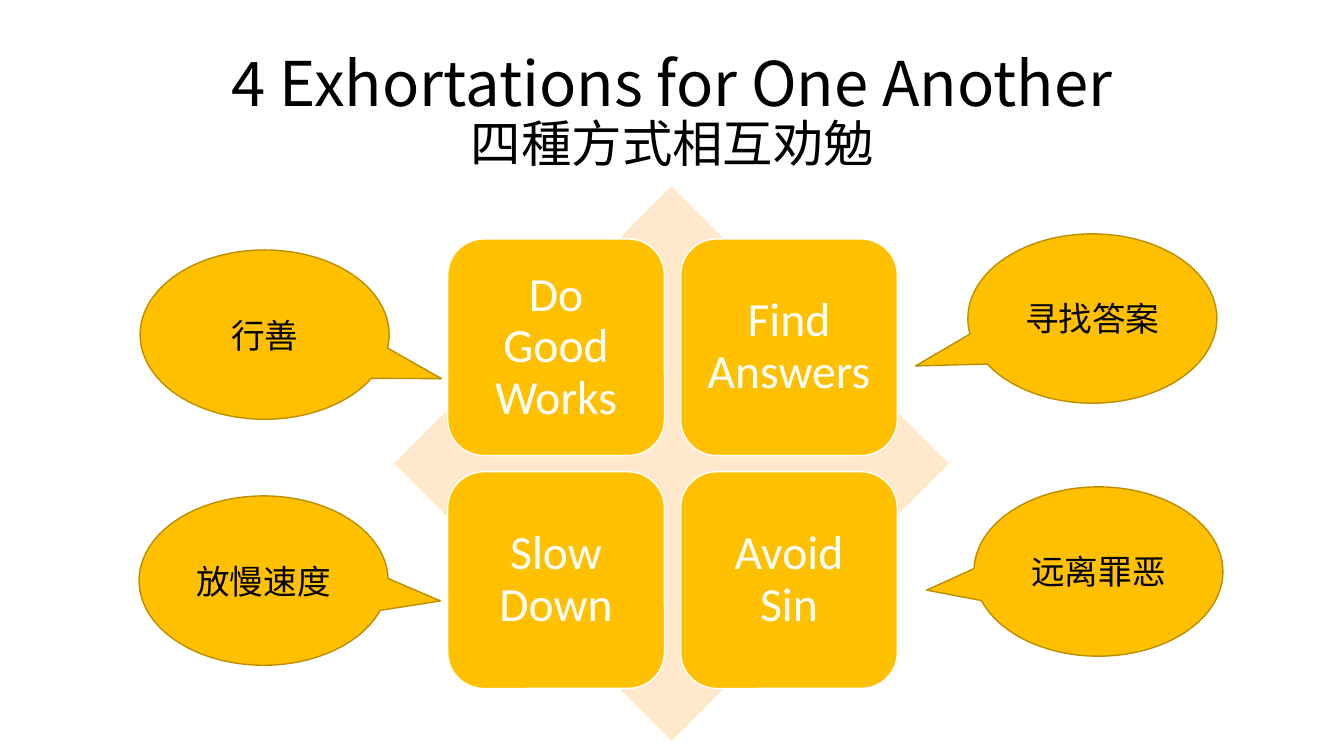
from dataclasses import dataclass

from pptx import Presentation
from pptx.dml.color import RGBColor
from pptx.enum.shapes import MSO_SHAPE as Preset
from pptx.enum.text import MSO_ANCHOR as Anchor, PP_ALIGN as Align
from pptx.oxml.ns import qn
from pptx.util import Inches, Pt
from lxml.etree import SubElement

COLORS = {"gold": "FFC000", "gold_edge": "BD8E00", "cream": "FFE8CC",
          "white": "FFFFFF", "black": "000000"}
CJK_FONT = "Noto Sans CJK JP"
LATIN_FONT = "Calibri"

TILE_SIZE, TILE_PITCH = 2.15, 2.31
TILES_LEFT, TILES_TOP = 4.44, 2.37
TILE_LABELS = ["Do Good Works", "Find Answers", "Slow Down", "Avoid Sin"]
CALLOUT_WIDTH, CALLOUT_HEIGHT = 2.47, 1.68


@dataclass
class Callout:
    text: str
    left: float
    top: float
    tip_x: float
    tip_y: float


CALLOUTS = [
    Callout("寻找答案", 9.6, 2.32, -0.71, 0.28),
    Callout("远离罪恶", 9.66, 4.83, -0.69, 0.11),
    Callout("放慢速度", 1.38, 4.92, 0.71, 0.12),
    Callout("行善", 1.39, 2.48, 0.71, 0.26),
]


def color(name: str) -> RGBColor:
    return RGBColor.from_string(COLORS[name])


def add_preset(slide, preset, left: float, top: float, width: float,
               height: float, fill: str, line: str | None = None):
    shape = slide.shapes.add_shape(
        preset, Inches(left), Inches(top), Inches(width), Inches(height))
    shape.shadow.inherit = False
    shape.fill.solid()
    shape.fill.fore_color.rgb = color(fill)
    if line:
        shape.line.color.rgb = color(line)
        shape.line.width = Pt(1)
    else:
        shape.line.fill.background()
    return shape


def write_lines(shape, lines: list[tuple[str, int]], font: str, ink: str,
                spacing: float = 1.0, inset: float | None = None) -> None:
    frame = shape.text_frame
    frame_format = {"word_wrap": True, "vertical_anchor": Anchor.MIDDLE}
    if inset is not None:
        for side in ("left", "top", "right", "bottom"):
            frame_format[f"margin_{side}"] = Inches(inset)
    for name, value in frame_format.items():
        setattr(frame, name, value)

    paragraph = frame.paragraphs[0]
    for name, value in {"alignment": Align.CENTER, "line_spacing": spacing}.items():
        setattr(paragraph, name, value)
    for index, (text, size) in enumerate(lines):
        if index:
            paragraph.add_line_break()
        run = paragraph.add_run()
        run.text = text
        for name, value in {"size": Pt(size), "name": font}.items():
            setattr(run.font, name, value)
        run.font.color.rgb = color(ink)
        # East Asian glyphs take their own typeface setting
        SubElement(run.font._element, qn("a:ea"), typeface=font)


def build_slide(presentation) -> None:
    slide = presentation.slides.add_slide(presentation.slide_layouts[6])

    # Title
    title = slide.shapes.add_textbox(
        Inches(0.92), Inches(0.4), Inches(11.5), Inches(1.45))
    write_lines(title, [("4 Exhortations for One Another", 44),
                        ("四種方式相互劝勉", 36)], CJK_FONT, "black", 0.9)

    # Diamond with a two-by-two grid of tiles
    add_preset(slide, Preset.DIAMOND, 3.91, 1.85, 5.5, 5.5, "cream")
    for index, label in enumerate(TILE_LABELS):
        row, column = divmod(index, 2)
        tile = add_preset(
            slide, Preset.ROUNDED_RECTANGLE, TILES_LEFT + column * TILE_PITCH,
            TILES_TOP + row * TILE_PITCH, TILE_SIZE, TILE_SIZE, "gold", "white")
        write_lines(tile, [(label, 34)], LATIN_FONT, "white", 0.9, 0.14)

    # Chinese callouts
    for callout in CALLOUTS:
        bubble = add_preset(slide, Preset.OVAL_CALLOUT, callout.left, callout.top,
                            CALLOUT_WIDTH, CALLOUT_HEIGHT, "gold", "gold_edge")
        bubble.adjustments[0] = callout.tip_x
        bubble.adjustments[1] = callout.tip_y
        write_lines(bubble, [(callout.text, 24)], CJK_FONT, "black")


def main() -> None:
    presentation = Presentation()
    presentation.slide_width = Inches(13.33)
    presentation.slide_height = Inches(7.5)
    build_slide(presentation)
    presentation.save("out.pptx")


if __name__ == "__main__":
    main()
